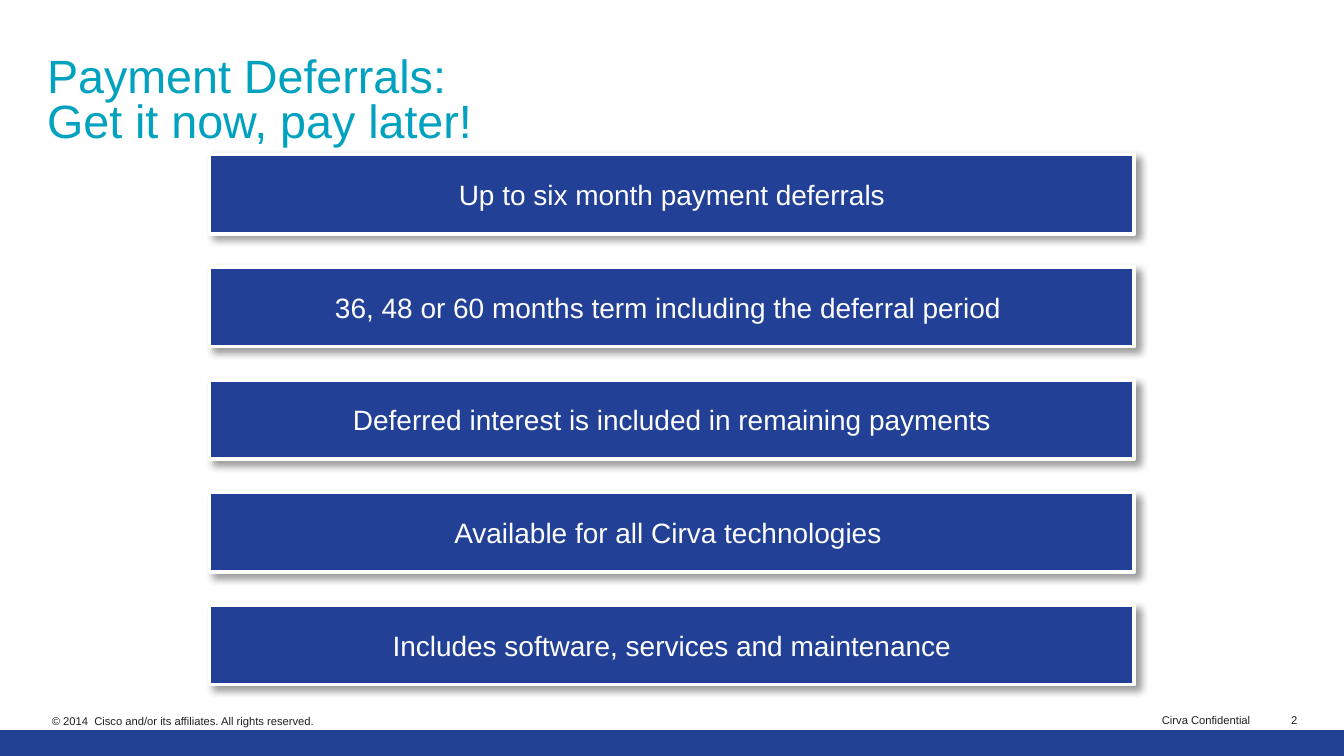
"""Build the payment deferrals slide."""
from dataclasses import dataclass

from lxml import etree
from pptx import Presentation, util as u
from pptx.dml.color import RGBColor
from pptx.enum import shapes, text
from pptx.oxml import ns

COLORS = {
    "title": "00A2BF",
    "offer": "224095",
    "footer_bar": "214195",
    "footer": "231F20",
    "light": "FFFFFF",
    "shadow": "000000",
}
FONT = "Arial"
OFFER_LEFT, OFFER_TOP = 3.96, 2.92
OFFER_WIDTH, OFFER_HEIGHT, OFFER_PITCH = 17.48, 1.5, 2.13

OFFERS = [
    "Up to six month payment deferrals",
    "36, 48 or 60 months term including the deferral period ",
    "Deferred interest is included in remaining payments",
    "Available for all Cirva technologies ",
    "Includes software, services and maintenance",
]


@dataclass
class FooterItem:
    wording: str
    left: float
    top: float
    width: float
    align: text.PP_ALIGN
    wrap: bool = False


FOOTER = [
    FooterItem("Cirva Confidential", 21.69, 13.39, 2.11, text.PP_ALIGN.RIGHT),
    FooterItem("2", 24.08, 13.39, 0.61, text.PP_ALIGN.RIGHT),
    FooterItem("© 2014  Cisco and/or its affiliates. All rights reserved.",
               0.81, 13.4, 9.5, text.PP_ALIGN.LEFT, wrap=True),
]


def color(name: str) -> RGBColor:
    return RGBColor.from_string(COLORS[name])


def write(frame, wording: str, *, size: float, tint: str,
          align=text.PP_ALIGN.LEFT, anchor=text.MSO_ANCHOR.MIDDLE,
          wrap: bool = True, insets=(0.25, 0.13), spacing: float = 1.0) -> None:
    frame.word_wrap = wrap
    frame.auto_size = text.MSO_AUTO_SIZE.NONE
    frame.vertical_anchor = anchor
    frame.margin_left = frame.margin_right = u.Cm(insets[0])
    frame.margin_top = frame.margin_bottom = u.Cm(insets[1])
    frame.text = wording
    for paragraph in frame.paragraphs:
        paragraph.alignment = align
        paragraph.line_spacing = spacing
        for run in paragraph.runs:
            run.font.name = FONT
            run.font.size = u.Pt(size)
            run.font.color.rgb = color(tint)


def add_shadow(shape) -> None:
    effects = shape._element.spPr.find(ns.qn("a:effectLst"))
    shadow = etree.SubElement(
        effects, ns.qn("a:outerShdw"), blurRad=str(u.Pt(4)),
        dist=str(u.Pt(3)), dir="2700000", algn="tl", rotWithShape="0")
    tint = etree.SubElement(shadow, ns.qn("a:srgbClr"), val=COLORS["shadow"])
    etree.SubElement(tint, ns.qn("a:alpha"), val="40000")


def draw_offer(slide, row: int, wording: str) -> None:
    offer = slide.shapes.add_shape(
        shapes.MSO_SHAPE.RECTANGLE, u.Cm(OFFER_LEFT),
        u.Cm(OFFER_TOP + row * OFFER_PITCH), u.Cm(OFFER_WIDTH), u.Cm(OFFER_HEIGHT))
    offer.fill.solid()
    offer.fill.fore_color.rgb = color("offer")
    offer.line.color.rgb = color("light")
    offer.line.width = u.Pt(2)
    offer.shadow.inherit = False
    add_shadow(offer)
    write(offer.text_frame, wording, size=15, tint="light",
          align=text.PP_ALIGN.CENTER)


def draw_footer_item(slide, item: FooterItem) -> None:
    box = slide.shapes.add_textbox(
        u.Cm(item.left), u.Cm(item.top), u.Cm(item.width), u.Cm(0.43))
    write(box.text_frame, item.wording, size=6, tint="footer", align=item.align,
          anchor=text.MSO_ANCHOR.BOTTOM, wrap=item.wrap, insets=(0.17, 0.08))


def draw_footer_bar(slide, width: u.Length) -> None:
    height = u.Cm(14.05)
    bar = slide.shapes.add_connector(
        shapes.MSO_CONNECTOR.STRAIGHT, 0, height, width, height)
    bar.line.color.rgb = color("footer_bar")
    bar.line.width = u.Pt(14)
    etree.SubElement(bar._element.spPr, ns.qn("a:effectLst"))


def draw_title(slide) -> None:
    title = slide.shapes.title
    title.left, title.top = u.Cm(0.64), u.Cm(0.89)
    title.width, title.height = u.Cm(23.85), u.Cm(1.75)
    write(title.text_frame, "Payment Deferrals:\vGet it now, pay later!",
          size=25, tint="title", anchor=text.MSO_ANCHOR.TOP,
          insets=(0.25, 0.2), spacing=0.8)


def main() -> None:
    deck = Presentation()
    deck.slide_width, deck.slide_height = u.Cm(25.4), u.Cm(14.29)
    slide = deck.slides.add_slide(deck.slide_layouts[5])
    for item in FOOTER:
        draw_footer_item(slide, item)
    draw_footer_bar(slide, deck.slide_width)
    draw_title(slide)
    for row, wording in reversed(list(enumerate(OFFERS))):
        draw_offer(slide, row, wording)
    deck.save("out.pptx")


if __name__ == "__main__":
    main()
